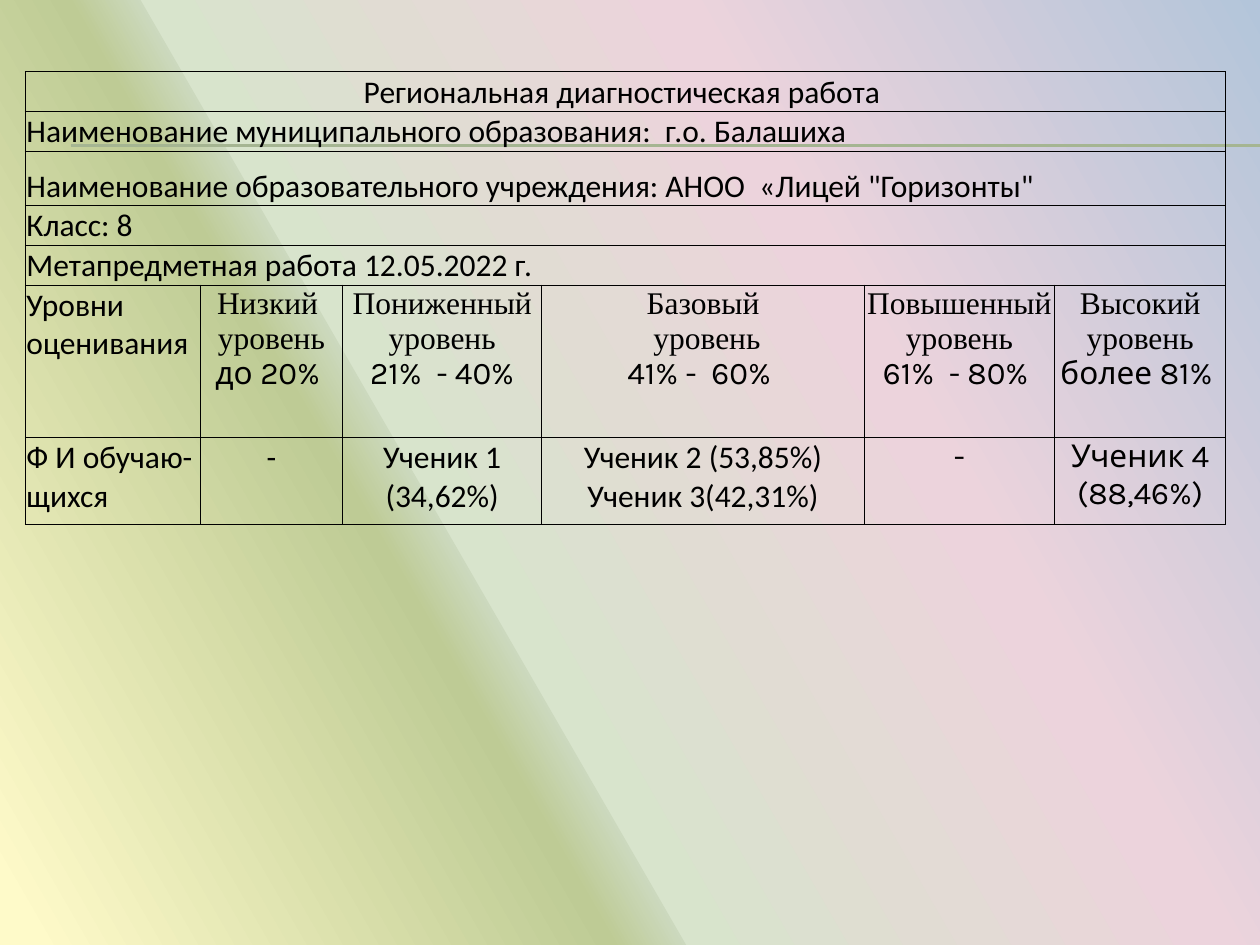
from lxml import etree
from pptx import Presentation
from pptx import util as u
from pptx.dml.color import RGBColor
from pptx.enum import shapes, text
from pptx.oxml import parse_xml
from pptx.oxml.ns import nsdecls, qn

# Content
BACKGROUND = [(0, "B3C5DA"), (32, "ECD3DC"), (62, "D8E4CC"),
              (62, "CCD9BE"), (66, "BECB95"), (98, "FEFAC9")]
SANS, SERIF, DIGITS = "Calibri", "Times New Roman", "Karla"
HEADINGS = [
    "Региональная диагностическая работа ",
    "Наименование муниципального образования:  г.о. Балашиха",
    "Наименование образовательного учреждения: АНОО  «Лицей \"Горизонты\"",
    "Класс: 8",
    "Метапредметная работа 12.05.2022 г.",
]
LEVELS = [
    ["Уровни оценивания"],
    ["Низкий ", "уровень", "до 20% "],
    ["Пониженный", "уровень", "21%  - 40%"],
    ["Базовый", " уровень", "41% -  60% "],
    ["Повышенный уровень", "61%  - 80% "],
    ["Высокий уровень", "более 81% "],
]
PUPILS = [
    ["Ф И обучаю-щихся"],
    ["-"],
    ["Ученик 1", "(34,62%)"],
    ["Ученик 2 (53,85%)", "Ученик 3(42,31%)"],
    ["-"],
    ["Ученик 4", "(88,46%)"],
]
COLUMN_WIDTHS = [1.39, 1.13, 1.58, 2.56, 1.51, 1.36]
ROW_HEIGHTS = [0.31, 0.31, 0.43, 0.31, 0.31, 1.21, 0.69]


def color(value):
    return RGBColor.from_string(value)


def set_background(slide):
    fill = slide.background.fill
    fill.gradient()
    gradient = slide.background._cSld.find(".//" + qn("a:gradFill"))
    stops = gradient.find(qn("a:gsLst"))
    for stop in list(stops):
        stops.remove(stop)
    for position, value in BACKGROUND:
        stop = etree.SubElement(stops, qn("a:gs"), pos=str(position * 1000))
        etree.SubElement(stop, qn("a:srgbClr"), val=value)
    fill.gradient_angle = 210  # counter-clockwise


def add_rule(slide, y):
    rule = slide.shapes.add_connector(
        shapes.MSO_CONNECTOR.STRAIGHT,
        u.Inches(0.56), u.Inches(y), u.Inches(10), u.Inches(y))
    rule.line.color.rgb = color("A5B592")
    rule.line.width = u.Pt(0.75)
    etree.SubElement(rule._element.spPr, qn("a:effectLst"))


def style_cell(cell):
    cell.margin_left = cell.margin_right = cell.margin_top = u.Inches(0.01)
    cell.margin_bottom = 0
    cell.fill.background()
    properties = cell._tc.get_or_add_tcPr()
    for index, side in enumerate(("lnL", "lnR", "lnT", "lnB")):
        properties.insert(index, parse_xml(
            f'<a:{side} {nsdecls("a")} w="{u.Pt(0.5)}"><a:solidFill>'
            f'<a:srgbClr val="000000"/></a:solidFill></a:{side}>'))


def write_cell(cell, lines, fonts, centered):
    cell.text_frame.text = "\n".join(lines)
    for para, font in zip(cell.text_frame.paragraphs, fonts):
        para.alignment = text.PP_ALIGN.CENTER if centered else text.PP_ALIGN.LEFT
        for span in para.runs:
            span.font.name = font
            span.font.size = u.Pt(18)
            span.font.color.rgb = color("000000")


deck = Presentation()
deck.slide_width, deck.slide_height = u.Inches(10), u.Inches(7.5)
page = deck.slides.add_slide(deck.slide_layouts[6])
set_background(page)
for rule_y in (1.15, 1.16):
    add_rule(page, rule_y)

# Table frame
frame = page.shapes.add_table(
    len(ROW_HEIGHTS), len(COLUMN_WIDTHS), u.Inches(0.2), u.Inches(0.57),
    u.Inches(sum(COLUMN_WIDTHS)), u.Inches(sum(ROW_HEIGHTS)))
table = frame.table
table.first_row = table.horz_banding = False
for column, width in zip(table.columns, COLUMN_WIDTHS):
    column.width = u.Inches(width)
for row, height in zip(table.rows, ROW_HEIGHTS):
    row.height = u.Inches(height)
for cell in table.iter_cells():
    style_cell(cell)

# Full-width heading rows
for r, heading in enumerate(HEADINGS):
    cell = table.cell(r, 0)
    cell.merge(table.cell(r, len(COLUMN_WIDTHS) - 1))
    cell.vertical_anchor = text.MSO_ANCHOR.BOTTOM
    write_cell(cell, [heading], [SANS], centered=r == 0)

# Level and pupil rows
level_row = len(HEADINGS)
for c, (level, pupils) in enumerate(zip(LEVELS, PUPILS)):
    level_fonts = [SERIF] * (len(level) - 1) + [DIGITS] if c else [SANS]
    pupil_font = DIGITS if c >= 4 else SANS
    write_cell(table.cell(level_row, c), level, level_fonts, centered=c > 0)
    write_cell(table.cell(level_row + 1, c), pupils,
               [pupil_font] * len(pupils), centered=c > 0)

deck.save("out.pptx")
